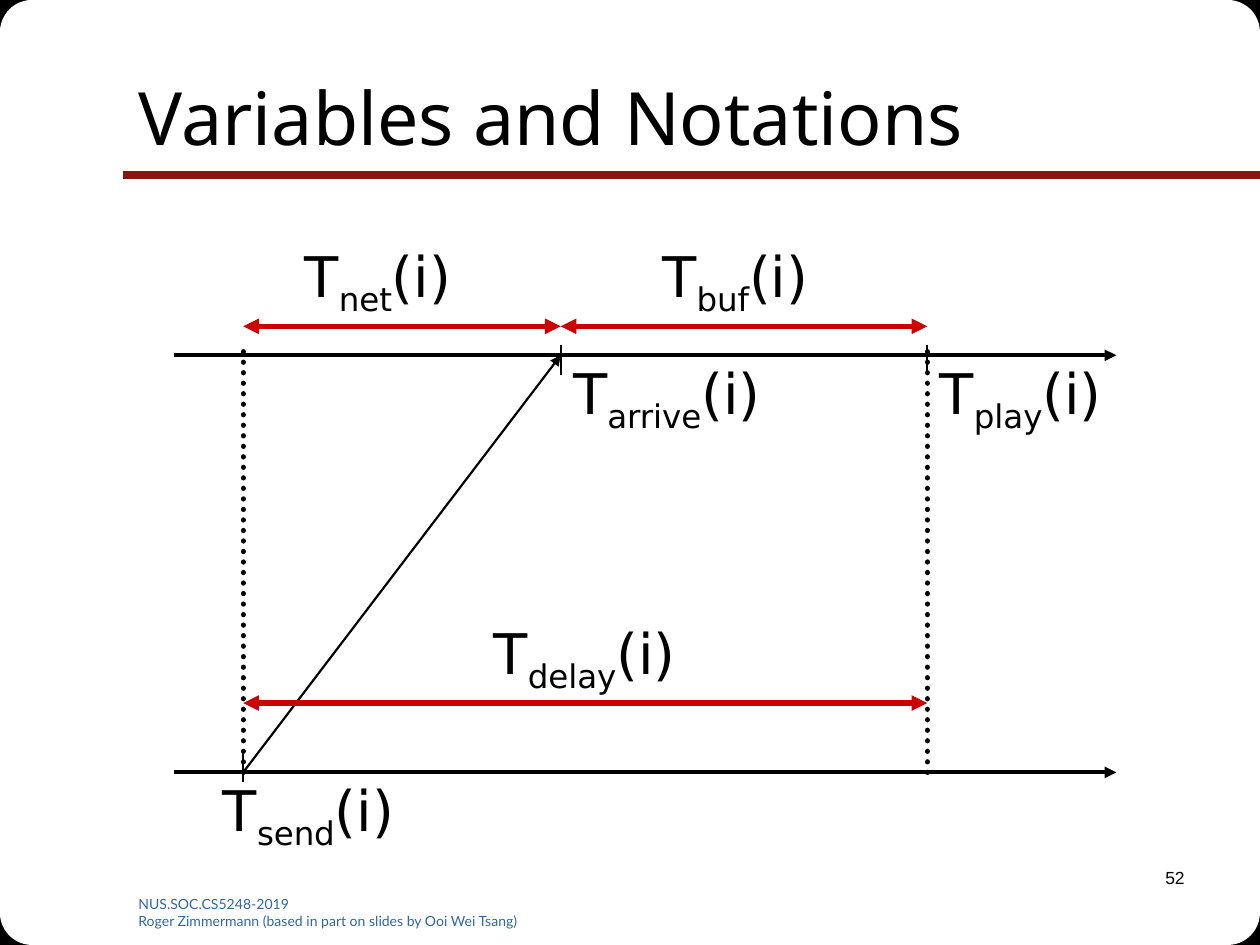
from lxml.etree import SubElement
from pptx import Presentation
from pptx.dml.color import RGBColor
from pptx.enum.dml import MSO_LINE
from pptx.enum.shapes import MSO_CONNECTOR, MSO_SHAPE
from pptx.enum.text import MSO_ANCHOR, MSO_AUTO_SIZE, PP_ALIGN
from pptx.oxml.ns import qn
from pptx.util import Inches, Pt

COLORS = {key: RGBColor.from_string(value) for key, value in {
    "black": "000000", "white": "FFFFFF", "rule": "891411",
    "interval": "CC0000", "footer": "336699"}.items()}
WIDTH, HEIGHT = 10, 7.5

deck = Presentation()
deck.slide_width, deck.slide_height = Inches(WIDTH), Inches(HEIGHT)
slide = deck.slides.add_slide(deck.slide_layouts[5])


def draw_line(start, end, color, width, ends=(), dotted=False):
    """Draw a straight line; ends lists its arrowheads."""
    line = slide.shapes.add_connector(
        MSO_CONNECTOR.STRAIGHT, *(Inches(v) for v in (*start, *end)))
    line.line.color.rgb = COLORS[color]
    line.line.width = Pt(width)
    properties = line._element.spPr
    outline = properties.find(qn("a:ln"))
    if dotted:
        line.line.dash_style = MSO_LINE.ROUND_DOT
        outline.set("cap", "rnd")
    for arrow in ends:
        SubElement(outline, qn(f"a:{arrow}"), type="triangle")
    SubElement(properties, qn("a:effectLst"))


def write_text(box, lines, size, font, color, align=PP_ALIGN.LEFT):
    """Place a text box; each line is a list of (text, baseline) runs."""
    frame = slide.shapes.add_textbox(*(Inches(v) for v in box)).text_frame
    frame.word_wrap = True
    for i, runs in enumerate(lines):
        paragraph = frame.add_paragraph() if i else frame.paragraphs[0]
        paragraph.alignment = align
        for text, baseline in runs:
            run = paragraph.add_run()
            run.text = text
            for name, value in {"size": Pt(size), "name": font}.items():
                setattr(run.font, name, value)
            run.font.color.rgb = COLORS[color]
            if baseline:
                run.font._element.set("baseline", str(baseline * 1000))


# Rounded slide corners: black squares under white rounded squares
for preset, side, color in ((MSO_SHAPE.RECTANGLE, 0.43, "black"),
                            (MSO_SHAPE.ROUNDED_RECTANGLE, 1.53, "white")):
    for left in (0, WIDTH - side):
        for top in (0, HEIGHT - side):
            corner = slide.shapes.add_shape(
                preset, *(Inches(v) for v in (left, top, side, side)))
            corner.shadow.inherit = False
            corner.fill.solid()
            corner.fill.fore_color.rgb = COLORS[color]
            corner.line.fill.background()

# Title, brought in front of the corners, and its rule
draw_line((WIDTH, 1.39), (0.98, 1.39), "rule", 4.5)
title = slide.shapes.title
slide.shapes._spTree.append(title._element)
for name, value in {"left": 1, "top": 0.3, "width": 8.5, "height": 1.25}.items():
    setattr(title, name, Inches(value))
title.text_frame.text = "Variables and Notations"
for name, value in {"vertical_anchor": MSO_ANCHOR.MIDDLE, "word_wrap": True,
                    "auto_size": MSO_AUTO_SIZE.NONE}.items():
    setattr(title.text_frame, name, value)
heading = title.text_frame.paragraphs[0]
heading.alignment = PP_ALIGN.LEFT
for name, value in {"size": Pt(42), "name": "Noto Sans"}.items():
    setattr(heading.runs[0].font, name, value)
heading.runs[0].font.color.rgb = COLORS["black"]

# Footer and slide number
credits = ("NUS.SOC.CS5248-2019",
           "Roger Zimmermann (based in part on slides by Ooi Wei Tsang)")
write_text((1, 7.06, 3.42, 0.28), [[(line, 0)] for line in credits],
           8, "Lato", "footer")
write_text((7.42, 6.83, 2.08, 0.5), [[("52", 0)]], 10, "Arial", "black",
           PP_ALIGN.RIGHT)

# Moments (columns) and time axes (rows) of the diagram
send, arrive, play = 1.93, 4.45, 7.36
receiver, sender = 2.82, 6.13
tick_top = receiver - 0.08

for axis in (sender, receiver):
    draw_line((1.38, axis), (8.86, axis), "black", 2.25, ["tailEnd"])

# Packet travelling from sender to receiver
draw_line((send, sender), (arrive, receiver), "black", 1.25, ["tailEnd"])

# Ticks at each moment, dotted guides at the outer two
for moment, top in ((send, 5.97), (arrive, tick_top), (play, tick_top)):
    draw_line((moment, top), (moment, top + 0.24), "black", 1.25)
for moment in (send, play):
    draw_line((moment, sender), (moment, tick_top), "black", 3, dotted=True)

# Intervals between moments
for start, end, row in ((send, arrive, 2.59), (arrive, play, 2.59),
                        (send, play, 5.58)):
    draw_line((start, row), (end, row), "interval", 3, ["headEnd", "tailEnd"])

# Variable labels with subscripts
for subscript, left, top, width in (
        ("net", 2.32, 1.87, 1.47), ("buf", 5.16, 1.87, 1.47),
        ("arrive", arrive, 2.8, 1.85), ("play", play, 2.8, 1.61),
        ("delay", 3.82, 4.86, 1.78), ("send", 1.67, 6.11, 1.69)):
    write_text((left, top, width, 0.64),
               [[("T", 0), (subscript, -25), ("(i)", 0)]],
               32, "DejaVu Sans", "black")

deck.save("out.pptx")
